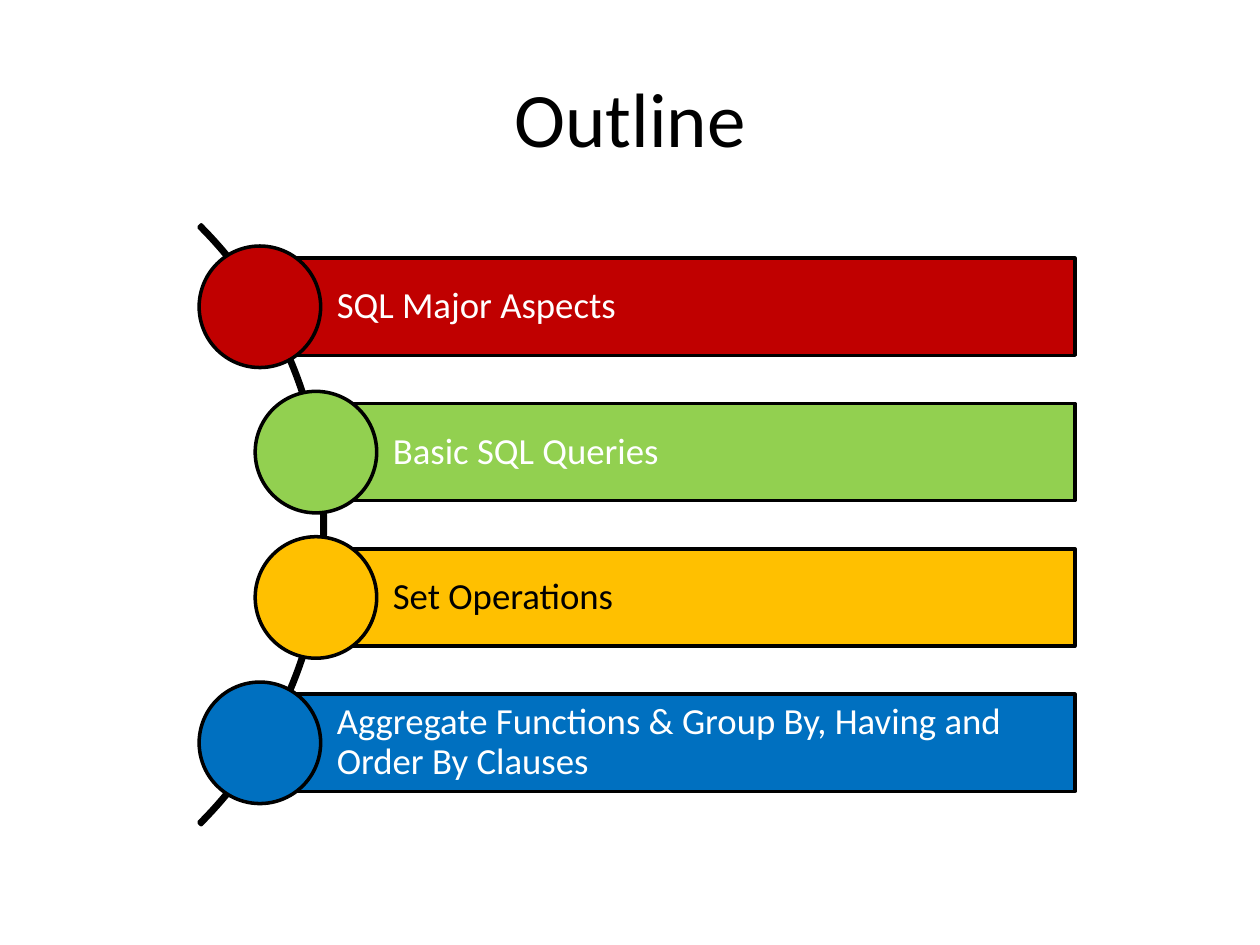
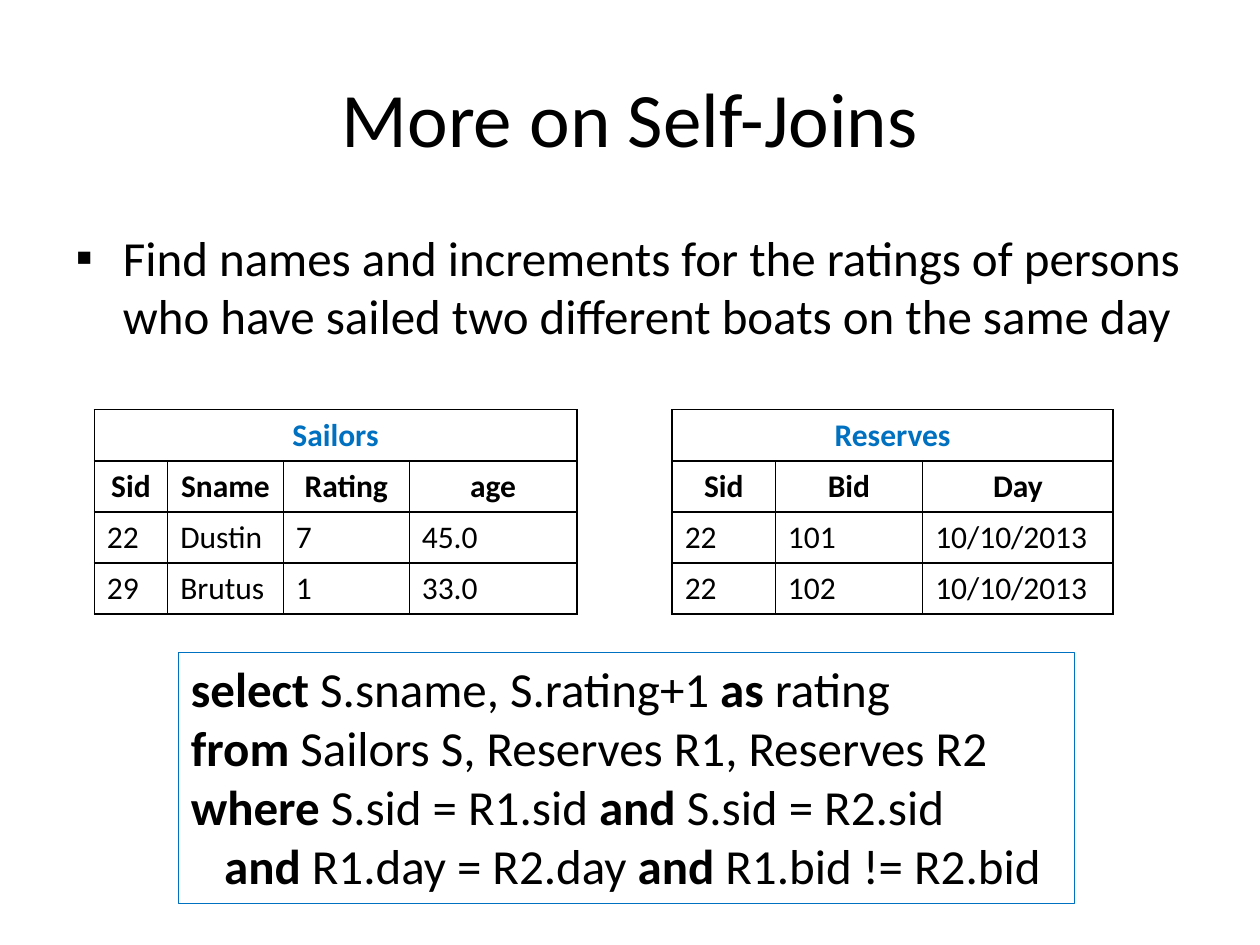
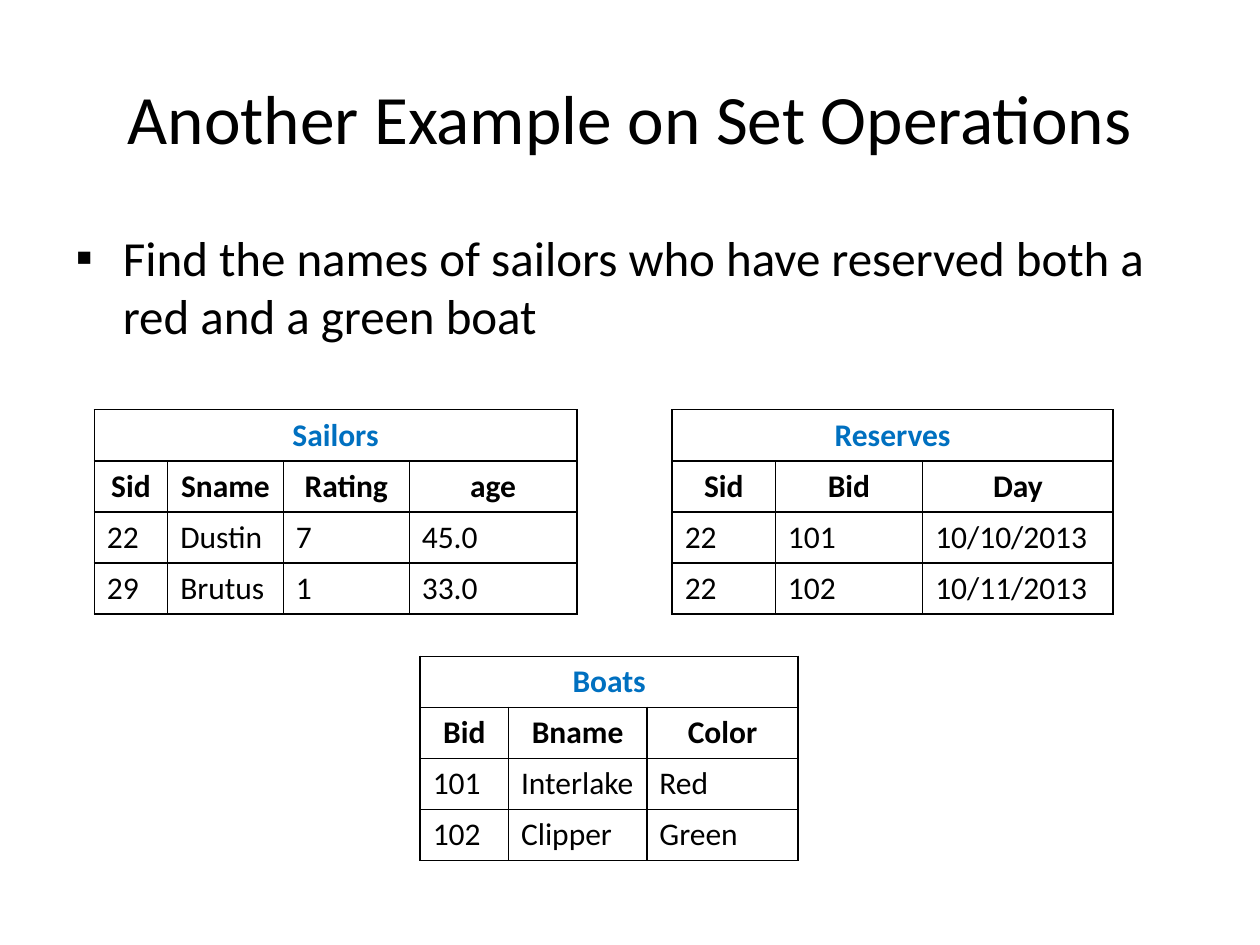
"""Build three SQL lecture slides: an outline, a self-join and a set operation."""
import dataclasses

import lxml.etree
import pptx
import pptx.dml.color
import pptx.enum.shapes
import pptx.enum.text
import pptx.oxml.ns
import pptx.shapes.base
import pptx.slide
import pptx.text.text
import pptx.util

Cm = pptx.util.Cm
Pt = pptx.util.Pt
SHAPE = pptx.enum.shapes.MSO_SHAPE
ANCHOR = pptx.enum.text.MSO_ANCHOR
ALIGN = pptx.enum.text.PP_ALIGN
qn = pptx.oxml.ns.qn

FONT = "Calibri"
BLACK, WHITE, BLUE = "000000", "FFFFFF", "0070C0"
TITLE_ONLY, TITLE_AND_BODY = 5, 1

ARC_RADIUS, ARC_X, ARC_Y = 8.55, -1.99, 10.58
BAR_RIGHT, BAR_HEIGHT, BAR_PITCH = 21.67, 1.96, 2.93
CIRCLE = 2.45
ROW_HEIGHT = 1.03


@dataclasses.dataclass
class Topic:
    text: str
    x: float
    fill: str
    color: str = WHITE


@dataclasses.dataclass
class Relation:
    name: str
    left: float
    top: float
    widths: list[float]
    header: list[str]
    rows: list[list[str]]


TOPICS = [
    Topic("SQL Major Aspects", 5.24, "C00000"),
    Topic("Basic SQL Queries", 6.37, "92D050"),
    Topic("Set Operations", 6.37, "FFC000", BLACK),
    Topic("Aggregate Functions & Group By, Having and Order By Clauses", 5.24, BLUE),
]
SAILORS = Relation(
    "Sailors", 1.9, 8.26, [1.48, 2.33, 2.54, 3.38],
    ["Sid", "Sname", "Rating", "age"],
    [["22", "Dustin", "7", "45.0"], ["29", "Brutus", "1", "33.0"]],
)
RESERVES_SAME_DAY = Relation(
    "Reserves", 13.55, 8.26, [2.08, 2.97, 3.84],
    ["Sid", "Bid", "Day"],
    [["22", "101", "10/10/2013"], ["22", "102", "10/10/2013"]],
)
RESERVES_TWO_DAYS = dataclasses.replace(
    RESERVES_SAME_DAY,
    rows=[["22", "101", "10/10/2013"], ["22", "102", "10/11/2013"]],
)
BOATS = Relation(
    "Boats", 8.47, 13.23, [1.78, 2.79, 3.05],
    ["Bid", "Bname", "Color"],
    [["101", "Interlake", "Red"], ["102", "Clipper", "Green"]],
)
QUERY = [
    "*select* S.sname, S.rating+1 *as* rating",
    "*from* Sailors S, Reserves R1, Reserves R2",
    "*where* S.sid = R1.sid *and* S.sid = R2.sid",
    "*and* R1.day = R2.day *and* R1.bid != R2.bid",
]


def rgb(value: str) -> pptx.dml.color.RGBColor:
    return pptx.dml.color.RGBColor.from_string(value)


def set_font(p: pptx.text.text._Paragraph, size: float, color: str = BLACK,
             bold: bool = False) -> None:
    p.font.name = FONT
    p.font.size = Pt(size)
    p.font.bold = bold
    p.font.color.rgb = rgb(color)


def place(sp: pptx.shapes.base.BaseShape, left: float, top: float,
          width: float, height: float) -> None:
    sp.left, sp.top, sp.width, sp.height = map(Cm, (left, top, width, height))


def add_slide(prs: pptx.presentation.Presentation, layout: int, title: str,
              size: float = 44) -> pptx.slide.Slide:
    s = prs.slides.add_slide(prs.slide_layouts[layout])
    sp = s.shapes.title
    place(sp, 1.27, 0.76, 22.86, 3.18)
    tf = sp.text_frame
    tf.text = title
    tf.vertical_anchor = ANCHOR.MIDDLE
    tf.auto_size = pptx.enum.text.MSO_AUTO_SIZE.NONE
    p = tf.paragraphs[0]
    p.alignment = ALIGN.CENTER
    set_font(p, size)
    return s


def add_task(s: pptx.slide.Slide, text: str) -> None:
    sp = s.placeholders[1]
    place(sp, 1.27, 4.45, 22.86, 12.57)
    sp.text_frame.text = text
    p = sp.text_frame.paragraphs[0]
    set_font(p, 28)
    bullet = lxml.etree.Element(qn("a:buChar"), char="▪")
    p._p.get_or_add_pPr().insert(0, bullet)


def add_outlined(s: pptx.slide.Slide, kind: SHAPE, left: float, top: float,
                 width: float, height: float, fill: str | None = None,
                 line: str = BLACK, weight: float = 2) -> pptx.shapes.base.BaseShape:
    sp = s.shapes.add_shape(kind, *map(Cm, (left, top, width, height)))
    sp.shadow.inherit = False
    if fill:
        sp.fill.solid()
        sp.fill.fore_color.rgb = rgb(fill)
    else:
        sp.fill.background()
    sp.line.color.rgb = rgb(line)
    sp.line.width = Pt(weight)
    return sp


def add_topic(s: pptx.slide.Slide, topic: Topic, y: float) -> None:
    bar = add_outlined(s, SHAPE.RECTANGLE, topic.x, y - BAR_HEIGHT / 2,
                       BAR_RIGHT - topic.x, BAR_HEIGHT, topic.fill)
    tf = bar.text_frame
    tf.word_wrap = True
    tf.vertical_anchor = ANCHOR.MIDDLE
    tf.margin_left = Cm(1.55)
    tf.margin_top = tf.margin_right = tf.margin_bottom = Cm(0.15)
    tf.text = topic.text
    p = tf.paragraphs[0]
    p.alignment = ALIGN.LEFT
    p.line_spacing = 0.9
    set_font(p, 21, topic.color)
    add_outlined(s, SHAPE.OVAL, topic.x - CIRCLE / 2, y - CIRCLE / 2,
                 CIRCLE, CIRCLE, topic.fill)


def add_borders(cell: pptx.table._Cell) -> None:
    tcPr = cell._tc.get_or_add_tcPr()
    for i, side in enumerate(("lnL", "lnR", "lnT", "lnB")):
        ln = lxml.etree.Element(qn(f"a:{side}"), w=str(Pt(1)))
        fill = lxml.etree.SubElement(ln, qn("a:solidFill"))
        lxml.etree.SubElement(fill, qn("a:srgbClr"), val=BLACK)
        tcPr.insert(i, ln)


def add_relation(s: pptx.slide.Slide, relation: Relation) -> None:
    columns = len(relation.widths)
    rows = [[relation.name] + [""] * (columns - 1), relation.header, *relation.rows]
    table = s.shapes.add_table(
        len(rows), columns, Cm(relation.left), Cm(relation.top),
        Cm(sum(relation.widths)), Cm(ROW_HEIGHT * len(rows))).table
    table.first_row = table.horz_banding = False
    for column, width in zip(table.columns, relation.widths):
        column.width = Cm(width)
    for i, row in enumerate(rows):
        table.rows[i].height = Cm(ROW_HEIGHT)
        for j, text in enumerate(row):
            cell = table.cell(i, j)
            cell.fill.background()
            add_borders(cell)
            cell.text = text
            p = cell.text_frame.paragraphs[0]
            p.alignment = ALIGN.CENTER if i < 2 else ALIGN.LEFT
            set_font(p, 18, BLACK if i else BLUE, i < 2)
    table.cell(0, 0).merge(table.cell(0, columns - 1))


def add_query(s: pptx.slide.Slide, lines: list[str]) -> None:
    sp = add_outlined(s, SHAPE.RECTANGLE, 3.6, 13.16, 18.06, 5.05,
                      line=BLUE, weight=0.75)
    tf = sp.text_frame
    tf.word_wrap = True
    tf.vertical_anchor = ANCHOR.TOP
    for i, line in enumerate(lines):
        p = tf.add_paragraph() if i else tf.paragraphs[0]
        p.alignment = ALIGN.LEFT
        set_font(p, 28)
        for j, part in enumerate(line.split("*")):
            if part:
                r = p.add_run()
                r.text = part
                r.font.bold = j % 2 == 1
    p._p.get_or_add_pPr().set("marL", str(Cm(0.67)))


def main() -> None:
    prs = pptx.Presentation()
    prs.slide_width, prs.slide_height = Cm(25.4), Cm(19.05)

    s = add_slide(prs, TITLE_ONLY, "Outline")
    arc = add_outlined(s, SHAPE.BLOCK_ARC, ARC_X - ARC_RADIUS, ARC_Y - ARC_RADIUS,
                       2 * ARC_RADIUS, 2 * ARC_RADIUS)
    for i, value in enumerate((189, 27, 0.004)):
        arc.adjustments[i] = value
    for i, topic in enumerate(TOPICS):
        add_topic(s, topic, ARC_Y + (i - (len(TOPICS) - 1) / 2) * BAR_PITCH)

    s = add_slide(prs, TITLE_AND_BODY, "More on Self-Joins")
    add_task(s, "Find names and increments for the ratings of persons "
                "who have sailed two different boats on the same day")
    for relation in (SAILORS, RESERVES_SAME_DAY):
        add_relation(s, relation)
    add_query(s, QUERY)

    s = add_slide(prs, TITLE_AND_BODY, "Another Example on Set Operations", 39.6)
    add_task(s, "Find the names of sailors who have reserved both a "
                "red and a green boat")
    for relation in (SAILORS, RESERVES_TWO_DAYS, BOATS):
        add_relation(s, relation)

    prs.save("out.pptx")


if __name__ == "__main__":
    main()
